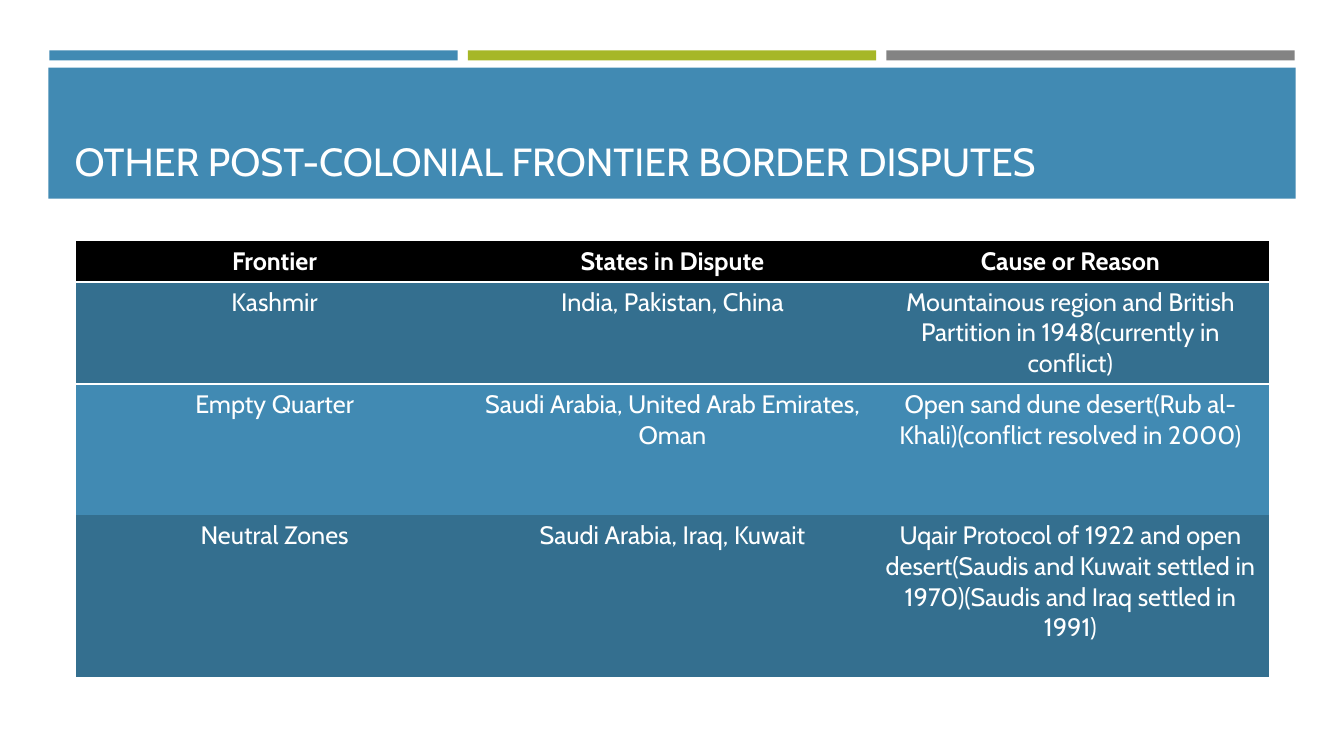
"""Build a slide with a table of post-colonial frontier border disputes."""
import pptx
import pptx.util
import pptx.dml.color
import pptx.enum.shapes
import pptx.enum.text
import pptx.oxml
import pptx.oxml.ns

Inches = pptx.util.Inches
Pt = pptx.util.Pt
PP_ALIGN = pptx.enum.text.PP_ALIGN
BLUE, DARK_BLUE, GREEN, GRAY = "418AB3", "346F8F", "A6B727", "838383"
BLACK, WHITE = "000000", "FFFFFF"


def paint(fill, color):
    fill.solid()
    fill.fore_color.rgb = pptx.dml.color.RGBColor.from_string(color)


def add_text(tf, text, size, align, bold=False):
    p = tf.paragraphs[0]
    p.alignment = align
    r = p.add_run()
    r.text = text
    r.font.name = "Cabin"
    r.font.size = Pt(size)
    r.font.bold = bold
    paint(r.font.fill, WHITE)


prs = pptx.Presentation()
prs.slide_width = Inches(13.33)
prs.slide_height = Inches(7.5)
s = prs.slides.add_slide(prs.slide_layouts[5])

bars = [(0.49 + 4.15 * i, 0.5, 4.05, 0.1, color)
        for i, color in enumerate([BLUE, GREEN, GRAY])]
for left, top, width, height, color in bars + [(0.48, 0.67, 12.37, 1.3, BLUE)]:
    sp = s.shapes.add_shape(pptx.enum.shapes.MSO_SHAPE.RECTANGLE, Inches(left),
                            Inches(top), Inches(width), Inches(height))
    sp.shadow.inherit = False
    sp.line.fill.background()
    paint(sp.fill, color)

title = s.shapes.title
title._element.getparent().append(title._element)
title.left, title.top = Inches(0.64), Inches(0.77)
title.width, title.height = Inches(12.06), Inches(1.11)
tf = title.text_frame
tf.word_wrap = True
tf.vertical_anchor = pptx.enum.text.MSO_ANCHOR.BOTTOM
add_text(tf, "OTHER POST-COLONIAL FRONTIER BORDER DISPUTES", 28, PP_ALIGN.LEFT)

rows = [
    (0.4, BLACK, ["Frontier", "States in Dispute", "Cause or Reason"]),
    (1, DARK_BLUE, ["Kashmir", "India, Pakistan, China",
                    "Mountainous region and British Partition in 1948"
                    "(currently in conflict)"]),
    (1.3, BLUE, ["Empty Quarter", "Saudi Arabia, United Arab Emirates, Oman",
                 "Open sand dune desert(Rub al-Khali)"
                 "(conflict resolved in 2000)"]),
    (1.6, DARK_BLUE, ["Neutral Zones", "Saudi Arabia, Iraq, Kuwait",
                      "Uqair Protocol of 1922 and open desert"
                      "(Saudis and Kuwait settled in 1970)"
                      "(Saudis and Iraq settled in 1991)"]),
]
table = s.shapes.add_table(len(rows), 3, Inches(0.75), Inches(2.39),
                           Inches(11.84), Inches(4.3)).table
table.horz_banding = False
style = table._tbl.tblPr.find(pptx.oxml.ns.qn("a:tableStyleId"))
style.text = "{2D5ABB26-0587-4C30-8999-92F81FD0307C}"

for i, (height, color, texts) in enumerate(rows):
    table.rows[i].height = Inches(height)
    for j, text in enumerate(texts):
        cell = table.cell(i, j)
        paint(cell.fill, color)
        add_text(cell.text_frame, text, 18, PP_ALIGN.CENTER, bold=i == 0)
        if i < 2:
            side = "lnB" if i == 0 else "lnT"
            border = pptx.oxml.parse_xml(
                f'<a:{side} {pptx.oxml.ns.nsdecls("a")} w="{Pt(2)}"><a:solidFill>'
                f'<a:srgbClr val="{WHITE}"/></a:solidFill></a:{side}>')
            cell._tc.get_or_add_tcPr().insert(0, border)

prs.save("out.pptx")
